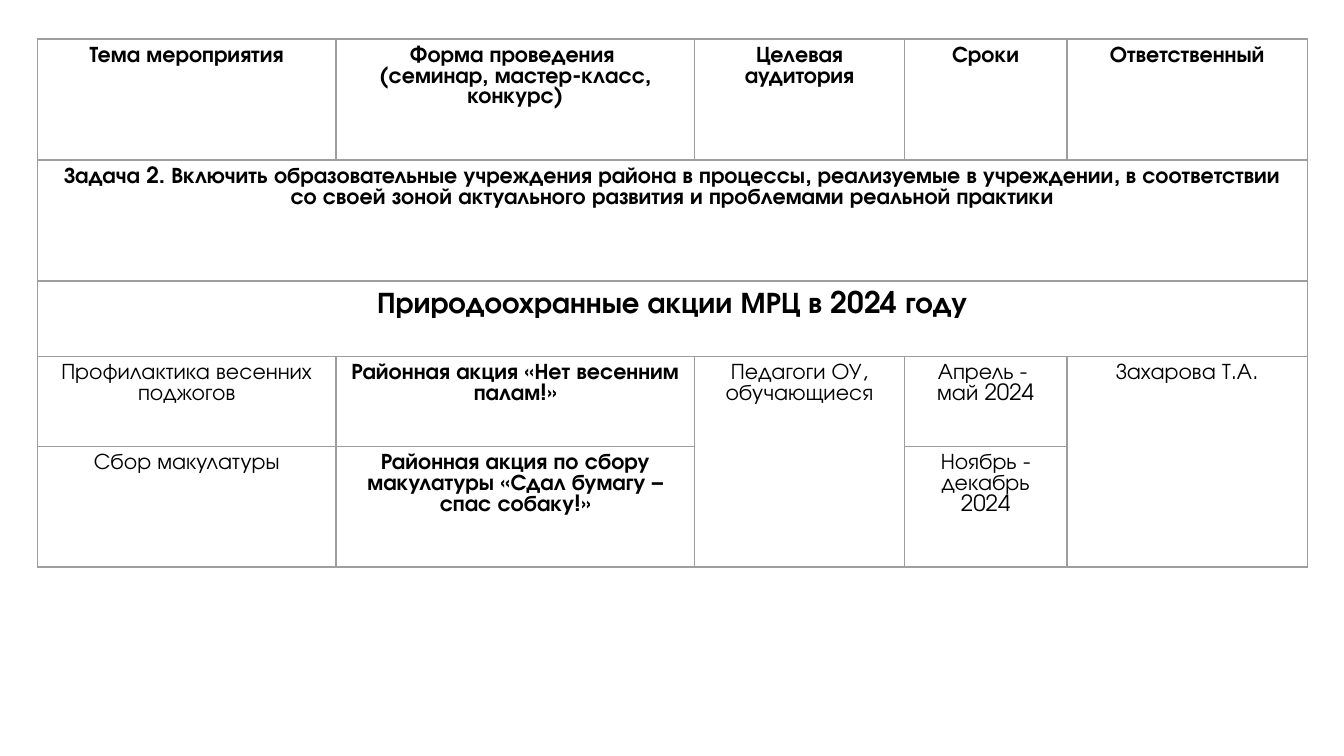
"""Build a slide with a table of yearly nature events."""
from lxml import etree
from pptx import Presentation
from pptx.dml.color import RGBColor
from pptx.enum.text import PP_ALIGN
from pptx.oxml.ns import qn
from pptx.util import Inches, Pt

CENTER = PP_ALIGN.CENTER
FONT = "TeX Gyre Adventor"
INK = "000000"
GRID = "9E9E9E"
WIDTHS = [2.22, 2.67, 1.56, 1.21, 1.79]
HEIGHTS = [0.9, 0.9, 0.56, 0.67, 0.9]
TITLE_ROW = 2
BOLD_COL = 1
ROWS = [
    ["Тема мероприятия",
     "Форма проведения \n(семинар, мастер-класс, конкурс)",
     "Целевая аудитория", "Сроки", "Ответственный"],
    ["Задача 2. Включить образовательные учреждения района в процессы, "
     "реализуемые в учреждении, в соответствии со своей зоной актуального "
     "развития и проблемами реальной практики", "", "", "", ""],
    ["Природоохранные акции МРЦ в 2024 году", "", "", "", ""],
    ["Профилактика весенних поджогов",
     "Районная акция «Нет весенним палам!»",
     "Педагоги ОУ, обучающиеся", "Апрель - \nмай 2024", "Захарова Т.А."],
    ["Сбор макулатуры",
     "Районная акция по сбору макулатуры «Сдал бумагу – спас собаку!»",
     "", "Ноябрь - декабрь 2024", ""],
]
MERGES = [(1, 0, 1, 4), (2, 0, 2, 4), (3, 2, 4, 2), (3, 4, 4, 4)]


def color(code):
    return RGBColor.from_string(code)


def add_borders(cell):
    props = cell._tc.get_or_add_tcPr()
    for place, side in enumerate(["lnL", "lnR", "lnT", "lnB"]):
        line = etree.Element(qn(f"a:{side}"), w=str(Pt(0.75)))
        fill = etree.SubElement(line, qn("a:solidFill"))
        etree.SubElement(fill, qn("a:srgbClr"), val=GRID)
        props.insert(place, line)


prs = Presentation()
prs.slide_width = Inches(10)
prs.slide_height = Inches(10 * 9 / 16)
slide = prs.slides.add_slide(prs.slide_layouts[6])

table = slide.shapes.add_table(
    len(ROWS), len(WIDTHS), Inches(0.28), Inches(0.29),
    Inches(sum(WIDTHS)), Inches(sum(HEIGHTS))).table
table.first_row = False
table.horz_banding = False
for col, width in zip(table.columns, WIDTHS):
    col.width = Inches(width)
for row, height in zip(table.rows, HEIGHTS):
    row.height = Inches(height)

for top, left, bottom, right in MERGES:
    table.cell(top, left).merge(table.cell(bottom, right))

for r, texts in enumerate(ROWS):
    for c, text in enumerate(texts):
        cell = table.cell(r, c)
        cell.fill.background()
        add_borders(cell)
        if not text:
            continue
        cell.text_frame.text = text
        for para in cell.text_frame.paragraphs:
            para.alignment = CENTER
            if r == TITLE_ROW:
                para.line_spacing = 1.15
            for run in para.runs:
                run.font.name = FONT
                run.font.size = Pt(16 if r == TITLE_ROW else 12)
                run.font.bold = r <= TITLE_ROW or c == BOLD_COL
                run.font.color.rgb = color(INK)

prs.save("out.pptx")
